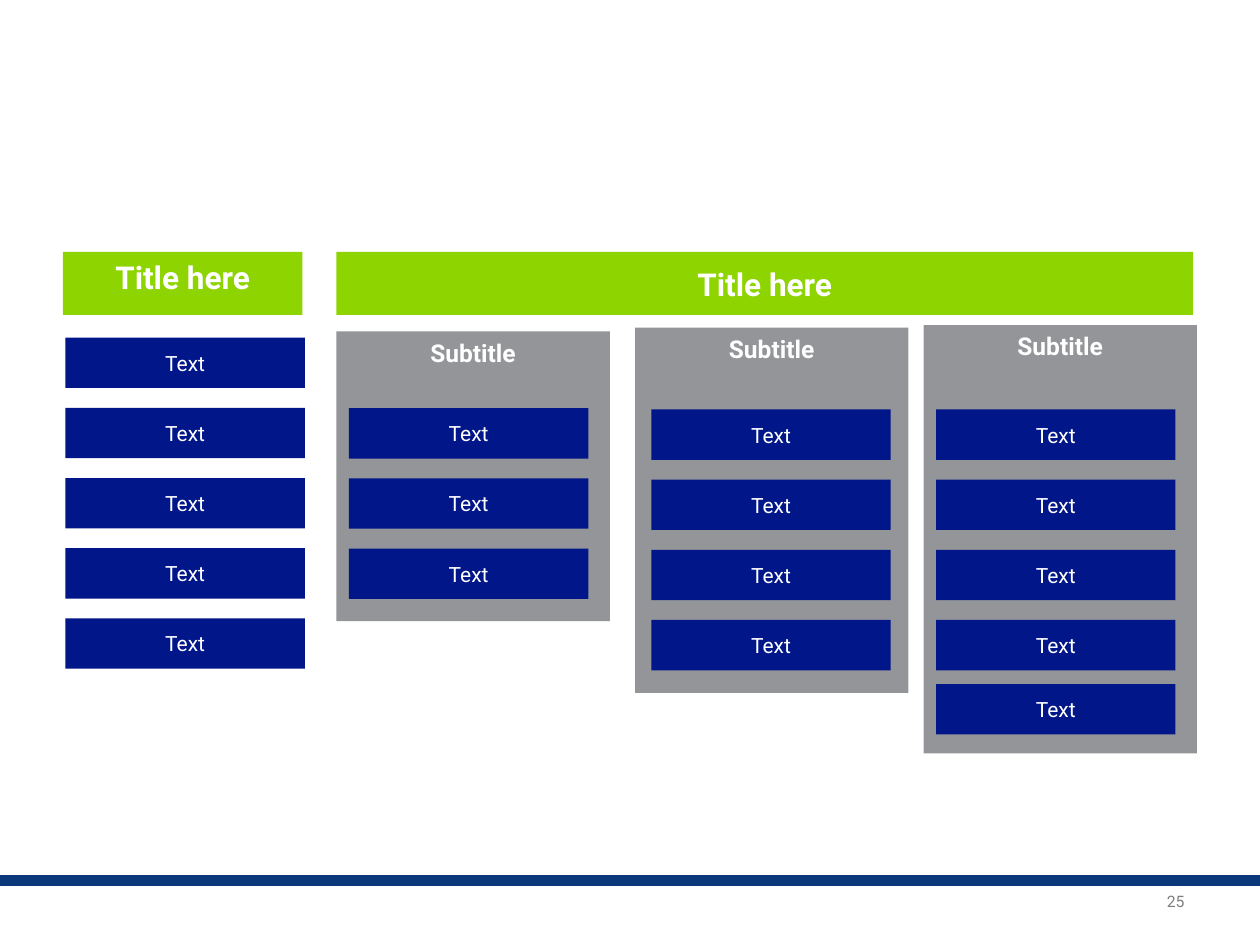
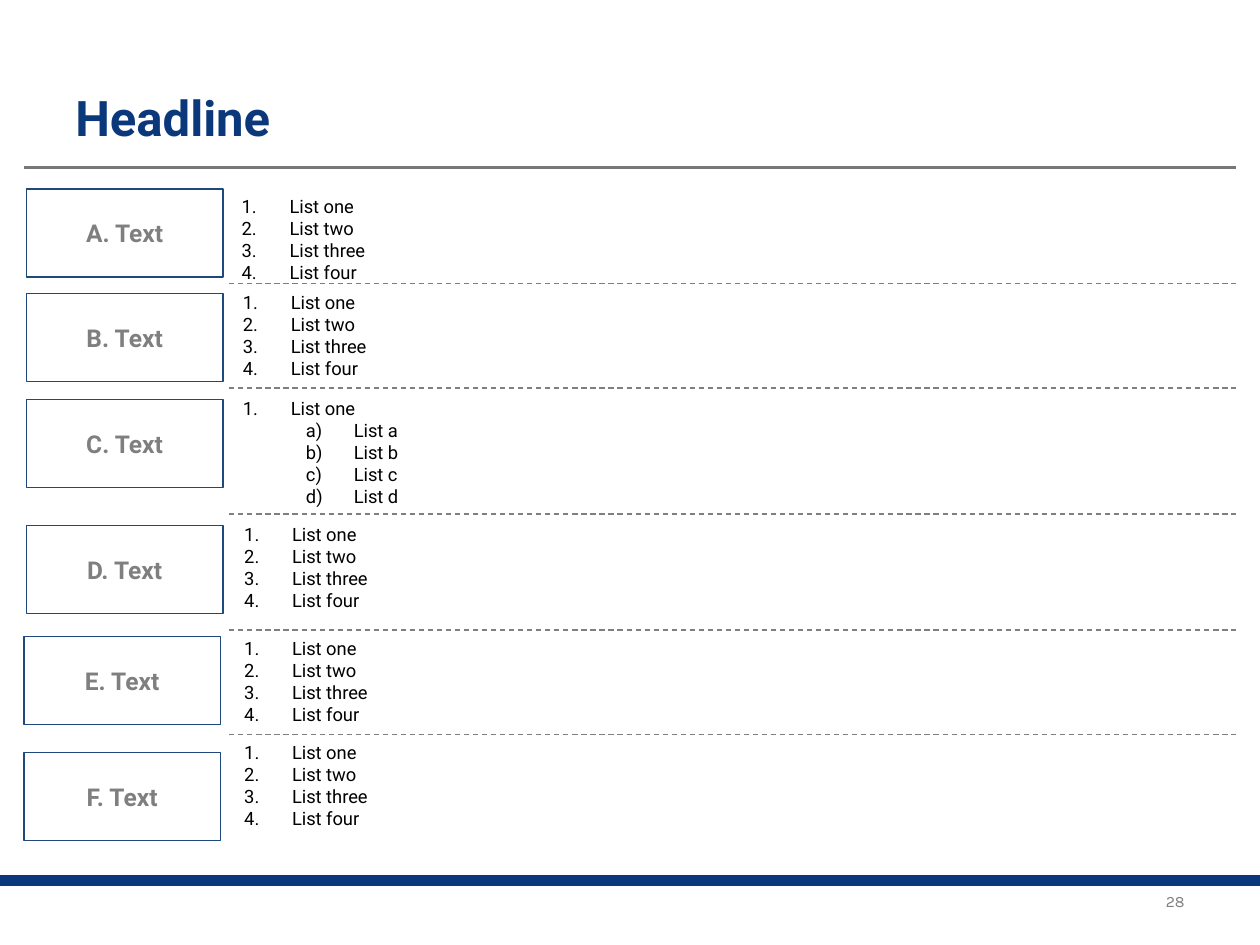
from lxml import etree
from pptx import Presentation
from pptx.dml.color import RGBColor
from pptx.enum.dml import MSO_LINE
from pptx.enum.shapes import MSO_CONNECTOR, MSO_SHAPE
from pptx.enum.text import MSO_ANCHOR as ANCHOR, PP_ALIGN as ALIGN
from pptx.oxml.ns import qn
from pptx.util import Inches, Pt

COLORS = {
    "navy": "0A387A", "cell": "001689", "green": "8ED400", "panel": "939598",
    "outline": "1F497D", "rule": "777777", "gray": "7F7F7F",
    "white": "FFFFFF", "black": "000000",
}


def add_text(s, box, text, size, color, bold=False, align=ALIGN.CENTER,
             anchor=ANCHOR.MIDDLE, fill=None, outline=None, font="Roboto"):
    """Add a rectangle if it has a fill or an outline, else a text box."""
    box = [Inches(v) for v in box]
    if fill or outline:
        sp = s.shapes.add_shape(MSO_SHAPE.RECTANGLE, *box)
        sp.shadow.inherit = False
        if fill:
            sp.fill.solid()
            sp.fill.fore_color.rgb = RGBColor.from_string(COLORS[fill])
        else:
            sp.fill.background()
        if outline:
            sp.line.color.rgb = RGBColor.from_string(COLORS[outline])
            sp.line.width = Pt(0.75)
        else:
            sp.line.fill.background()
    else:
        sp = s.shapes.add_textbox(*box)
    tf = sp.text_frame
    tf.text = text
    tf.word_wrap = True
    tf.vertical_anchor = anchor
    for p in tf.paragraphs:
        p.alignment = align
        for r in p.runs:
            r.font.name = font
            r.font.size = Pt(size)
            r.font.bold = bold
            r.font.color.rgb = RGBColor.from_string(COLORS[color])
    return sp


def add_rule(s, x1, x2, y, color, width, dash=None):
    """Add a horizontal line."""
    ln = s.shapes.add_connector(MSO_CONNECTOR.STRAIGHT, Inches(x1), Inches(y),
                                Inches(x2), Inches(y))
    ln.line.color.rgb = RGBColor.from_string(COLORS[color])
    ln.line.width = Pt(width)
    if dash:
        ln.line.dash_style = dash
    etree.SubElement(ln._element.spPr, qn("a:effectLst"))


prs = Presentation()
prs.slide_width, prs.slide_height = Inches(10), Inches(7.5)

# Shared footer: navy band and page number
slides = []
for number, font in (("25", "Roboto"), ("28", "Karla")):
    s = prs.slides.add_slide(prs.slide_layouts[6])
    add_rule(s, 0, 10, 6.99, "navy", 6)
    add_text(s, (7.17, 7, 2.33, 0.31), number, 9, "gray", align=ALIGN.RIGHT, font=font)
    slides.append(s)
columns_slide, lists_slide = slides

# Slide 1: column headings, gray panels and text cells
s = columns_slide
for x, width, anchor in ((0.5, 1.9, ANCHOR.TOP), (2.67, 6.8, ANCHOR.MIDDLE)):
    add_text(s, (x, 2, width, 0.5), "Title here", 18, "white", True,
             anchor=anchor, fill="green")

for x, y, height in ((2.67, 2.63, 2.3), (5.04, 2.6, 2.9), (7.33, 2.58, 3.4)):
    add_text(s, (x, y, 2.17, height), "Subtitle", 14, "white", True,
             anchor=ANCHOR.TOP, fill="panel")

cell_columns = (  # left, top of first cell, number of cells
    (0.52, 2.68, 5), (2.77, 3.24, 3), (5.17, 3.25, 4), (7.43, 3.25, 5),
)
for x, top, count in cell_columns:
    for i in range(count):
        y = min(top + i * 0.557, 5.43)
        add_text(s, (x, y, 1.9, 0.4), "Text", 12, "white", fill="cell")

# Slide 2: headline and lettered rows of numbered lists
s = lists_slide
add_text(s, (0.5, 0.3, 9, 1.25), "Headline", 28, "navy", True, align=ALIGN.LEFT)
add_rule(s, 0.19, 9.81, 1.33, "rule", 1.25)

numbered = ["List one", "List two", "List three", "List four"]
nested = ["List one", "List a", "List b", "List c", "List d"]
rows = (  # letter, label left and top, list left and top, items
    ("A", 0.21, 1.5, 1.82, 1.5, numbered),
    ("B", 0.21, 2.33, 1.83, 2.26, numbered),
    ("C", 0.21, 3.17, 1.83, 3.1, nested),
    ("D", 0.21, 4.17, 1.84, 4.1, numbered),
    ("E", 0.19, 5.05, 1.84, 5.01, numbered),
    ("F", 0.19, 5.97, 1.84, 5.83, numbered),
)
for letter, label_x, label_y, list_x, list_y, items in rows:
    add_text(s, (label_x, label_y, 1.56, 0.7), f"{letter}. Text", 14, "gray",
             True, outline="outline")
    height = 1.16 if items is nested else 0.81
    sp = add_text(s, (list_x, list_y, 7.86, height), "\n".join(items), 10.5,
                  "black", align=ALIGN.LEFT, anchor=ANCHOR.TOP)
    for i, p in enumerate(sp.text_frame.paragraphs):
        p.level = int(items is nested and i > 0)
        pPr = p._p.get_or_add_pPr()
        pPr.set("marL", str(Inches(0.38 + 0.5 * p.level)))
        pPr.set("indent", str(Inches(-0.38)))
        style = "alphaLcParenR" if p.level else "arabicPeriod"
        etree.SubElement(pPr, qn("a:buAutoNum"), type=style)

for y in (2.25, 3.08, 4.08, 5, 5.83):
    add_rule(s, 1.82, 9.81, y, "gray", 0.75, MSO_LINE.DASH)

prs.save("out.pptx")
